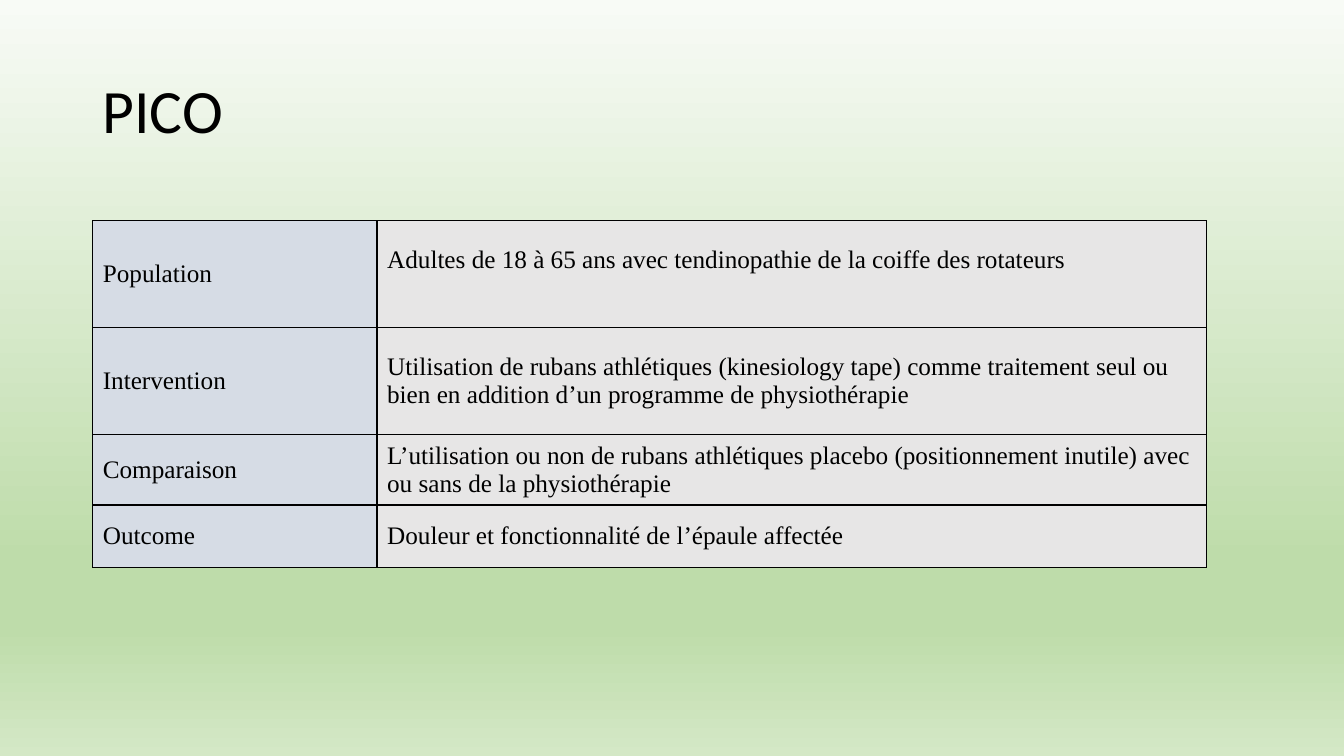
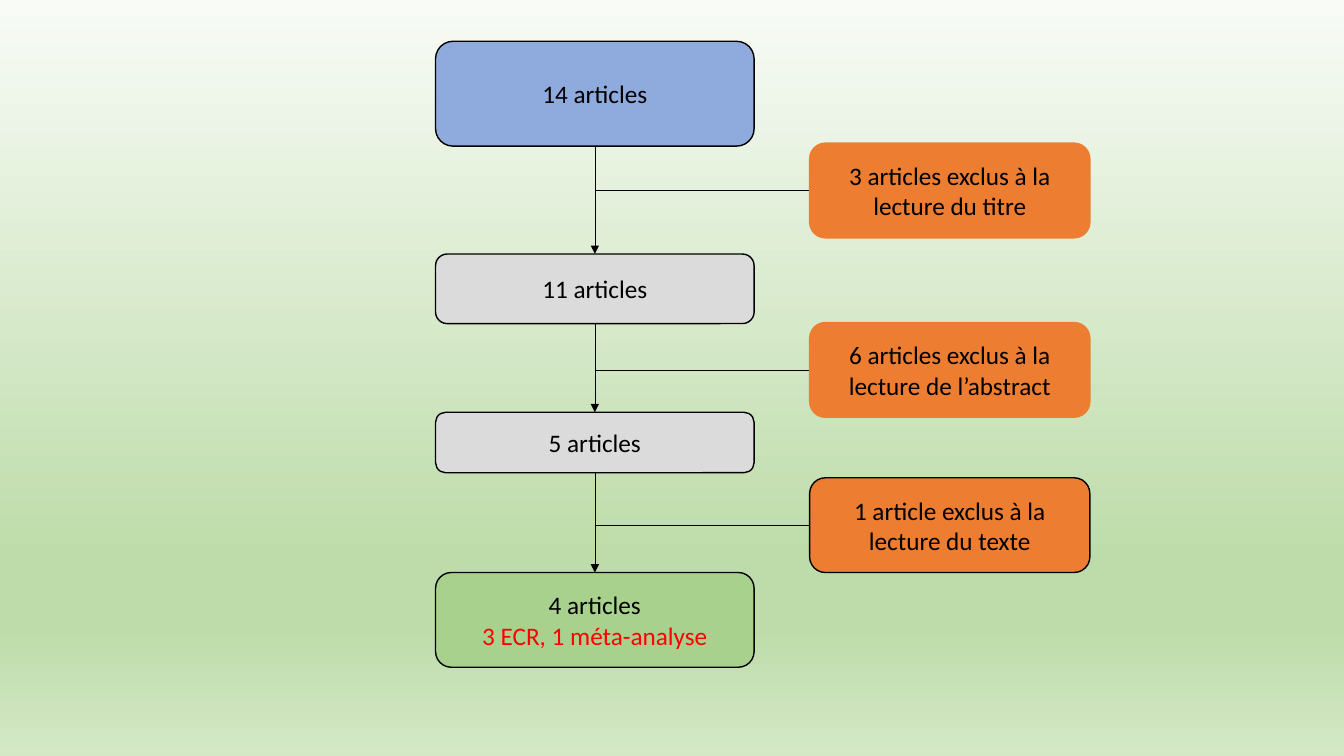
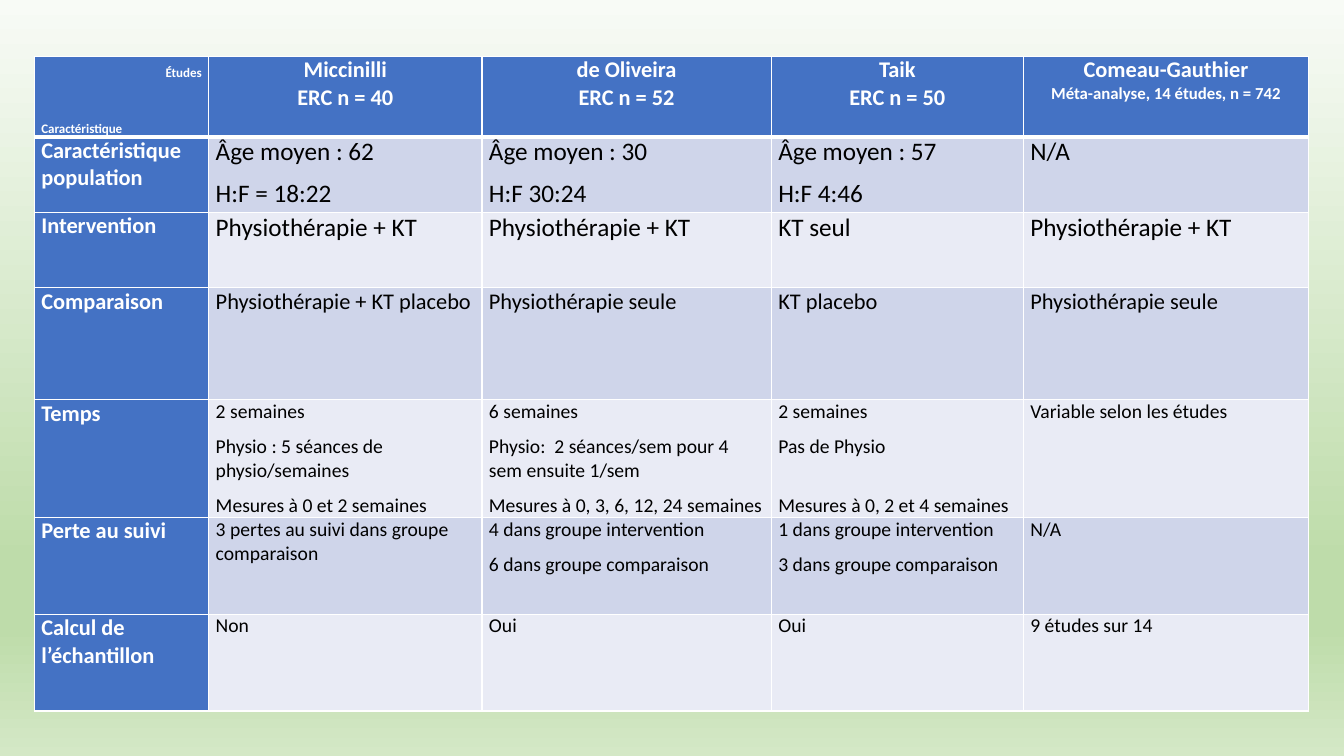
from lxml import etree
from pptx import Presentation
from pptx.dml.color import RGBColor
from pptx.enum import shapes, text
from pptx.oxml.ns import qn
from pptx.util import Inches, Pt

# Shared style
COLORS = {
    "black": "000000", "white": "FFFFFF", "red": "FF0000",
    "label": "D6DCE5", "value": "E7E6E6",
    "blue": "8FAADC", "grey": "DBDBDB", "green": "A9D18E", "orange": "ED7D31",
    "header": "4472C4", "band_dark": "CFD5EA", "band_light": "E9EBF5",
}
BACKGROUND = [(0, "F8FBF6"), (74, "BEDCAA"), (83, "BEDCAA"), (100, "D4E8C6")]
SANS, SERIF = "Calibri", "Times New Roman"
LEFT, CENTER, RIGHT = text.PP_ALIGN.LEFT, text.PP_ALIGN.CENTER, text.PP_ALIGN.RIGHT
MIDDLE, TOP = text.MSO_ANCHOR.MIDDLE, text.MSO_ANCHOR.TOP

# Slide 1: label, description, row height
PICO = [
    ("Population", "Adultes de 18 à 65 ans avec tendinopathie de la coiffe des rotateurs", 1.06),
    ("Intervention", "Utilisation de rubans athlétiques (kinesiology tape) comme traitement seul ou "
     "bien en addition d’un programme de physiothérapie", 1.06),
    ("Comparaison", "L’utilisation ou non de rubans athlétiques placebo (positionnement inutile) "
     "avec ou sans de la physiothérapie", 0.62),
    ("Outcome", "Douleur et fonctionnalité de l’épaule affectée", 0.62),
]

# Slide 2: lines with colours, top, height, fill
STAGES = [
    ([("14 articles", "black")], 0.41, 1.04, "blue"),
    ([("11 articles", "black")], 2.52, 0.69, "grey"),
    ([("5 articles", "black")], 4.09, 0.6, "grey"),
    ([("4 articles", "black"), ("3 ECR, 1 méta-analyse", "red")], 5.68, 0.94, "green"),
]
# Text, top, outline
EXCLUSIONS = [
    ("3 articles exclus à la lecture du titre", 1.42, "orange"),
    ("6 articles exclus à la lecture de l’abstract", 3.2, "orange"),
    ("1 article exclus à la lecture du texte", 4.74, "black"),
]
STAGE_X, STAGE_W = 4.32, 3.16
EXCLUSION_X, EXCLUSION_W, EXCLUSION_H = 8.03, 2.78, 0.94

# Slide 3: studies as (name, detail, detail size)
STUDIES = [
    ("Miccinilli", "ERC n = 40", 16),
    ("de Oliveira", "ERC n = 52", 16),
    ("Taik", "ERC n = 50", 16),
    ("Comeau-Gauthier", "Méta-analyse, 14 études, n = 742", 12),
]
STUDY_COLS = [1.73, 2.71, 2.87, 2.5, 2.83]
HEADER_H = 0.74
# Label, row height, text size, paragraphs for each study
FEATURES = [
    ("Caractéristique population", 0.75, 18, [
        ["Âge moyen : 62", "H:F = 18:22"], ["Âge moyen : 30", "H:F 30:24"],
        ["Âge moyen : 57", "H:F 4:46"], ["N/A"]]),
    ("Intervention", 0.75, 18, [
        ["Physiothérapie + KT"], ["Physiothérapie + KT"], ["KT seul"], ["Physiothérapie + KT"]]),
    ("Comparaison", 1.11, 16, [
        ["Physiothérapie + KT placebo"], ["Physiothérapie seule"], ["KT placebo"],
        ["Physiothérapie seule"]]),
    ("Temps", 0.96, 14, [
        ["2 semaines", "Physio : 5 séances de physio/semaines", "Mesures à 0 et 2 semaines"],
        ["6 semaines", "Physio:  2 séances/sem pour 4 sem ensuite 1/sem",
         "Mesures à 0, 3, 6, 12, 24 semaines"],
        ["2 semaines", "Pas de Physio", "Mesures à 0, 2 et 4 semaines"],
        ["Variable selon les études"]]),
    ("Perte au suivi", 0.96, 14, [
        ["3 pertes au suivi dans groupe comparaison"],
        ["4 dans groupe intervention", "6 dans groupe comparaison"],
        ["1 dans groupe intervention", "3 dans groupe comparaison"], ["N/A"]]),
    ("Calcul de l’échantillon", 0.96, 14, [["Non"], ["Oui"], ["Oui"], ["9 études sur 14"]]),
]


def rgb(name):
    return RGBColor.from_string(COLORS[name])


def add_run(p, words, size, color="black", font=SANS, bold=False):
    r = p.add_run()
    r.text = words
    r.font.size, r.font.name, r.font.bold = Pt(size), font, bold
    r.font.color.rgb = rgb(color)
    return r


def next_paragraph(tf, index, align=LEFT, after=0):
    p = tf.add_paragraph() if index else tf.paragraphs[0]
    p.alignment, p.space_after = align, Pt(after)
    return p


def set_background(master):
    master.background.fill.gradient()
    grad = next(master.element.iter(qn("a:gradFill")))
    stops = grad.find(qn("a:gsLst"))
    for old in list(stops):
        stops.remove(old)
    for pos, color in BACKGROUND:
        stop = etree.SubElement(stops, qn("a:gs"), pos=str(pos * 1000))
        etree.SubElement(stop, qn("a:srgbClr"), val=color)
    lin = grad.find(qn("a:lin"))
    lin.set("ang", "5400000")
    lin.set("scaled", "0")


def add_table(slide, x, y, cols, rows):
    frame = slide.shapes.add_table(len(rows), len(cols), Inches(x), Inches(y),
                                   Inches(sum(cols)), Inches(sum(rows)))
    table = frame.table
    table.first_row = table.horz_banding = False
    for col, w in zip(table.columns, cols):
        col.width = Inches(w)
    for row, h in zip(table.rows, rows):
        row.height = Inches(h)
    return table


def style_cell(cell, fill, border, anchor, top=1, bottom=1):
    tcPr = cell._tc.get_or_add_tcPr()
    for side, width in (("L", 1), ("R", 1), ("T", top), ("B", bottom)):
        ln = etree.SubElement(tcPr, qn("a:ln" + side), w=str(Pt(width)))
        solid = etree.SubElement(ln, qn("a:solidFill"))
        etree.SubElement(solid, qn("a:srgbClr"), val=COLORS[border])
    cell.fill.solid()
    cell.fill.fore_color.rgb = rgb(fill)
    cell.vertical_anchor = anchor


def add_box(slide, x, y, w, h, fill, outline, lines):
    sp = slide.shapes.add_shape(shapes.MSO_SHAPE.ROUNDED_RECTANGLE,
                                Inches(x), Inches(y), Inches(w), Inches(h))
    sp.shadow.inherit = False
    sp.fill.solid()
    sp.fill.fore_color.rgb = rgb(fill)
    sp.line.color.rgb, sp.line.width = rgb(outline), Pt(1)
    tf = sp.text_frame
    tf.word_wrap, tf.vertical_anchor = True, MIDDLE
    for i, (words, color) in enumerate(lines):
        add_run(next_paragraph(tf, i, CENTER), words, 18, color)


def add_line(slide, x1, y1, x2, y2, arrow=False):
    line = slide.shapes.add_connector(shapes.MSO_CONNECTOR.STRAIGHT,
                                      Inches(x1), Inches(y1), Inches(x2), Inches(y2))
    line.line.color.rgb, line.line.width = rgb("black"), Pt(0.5)
    if arrow:
        etree.SubElement(line.line._get_or_add_ln(), qn("a:tailEnd"), type="triangle")
    etree.SubElement(line._element.spPr, qn("a:effectLst"))


def build_pico(slide):
    # Title
    title = slide.shapes.add_textbox(Inches(0.92), Inches(0.4), Inches(11.5), Inches(1.45))
    tf = title.text_frame
    tf.word_wrap, tf.vertical_anchor = True, MIDDLE
    p = next_paragraph(tf, 0)
    p.line_spacing = 0.9
    add_run(p, "PICO", 44)

    # Table
    table = add_table(slide, 0.92, 2.19, [2.82, 8.23], [h for _, _, h in PICO])
    for i, (label, value, _) in enumerate(PICO):
        for j, (words, fill) in enumerate([(label, "label"), (value, "value")]):
            cell = table.cell(i, j)
            style_cell(cell, fill, "black", MIDDLE)
            add_run(next_paragraph(cell.text_frame, 0), words, 18, font=SERIF)
    table.cell(0, 1).margin_bottom = Inches(0.33)


def build_selection(slide):
    # Stages and the arrows between them
    axis = STAGE_X + STAGE_W / 2
    for lines, y, h, fill in STAGES:
        add_box(slide, STAGE_X, y, STAGE_W, h, fill, "black", lines)
    for (_, y, h, _), (_, next_y, _, _) in zip(STAGES, STAGES[1:]):
        add_line(slide, axis, y + h, axis, next_y, arrow=True)

    # Exclusions
    for words, y, outline in EXCLUSIONS:
        mid = y + EXCLUSION_H / 2
        add_line(slide, axis, mid, EXCLUSION_X, mid)
        add_box(slide, EXCLUSION_X, y, EXCLUSION_W, EXCLUSION_H, "orange", outline,
                [(words, "black")])


def build_studies(slide):
    rows = [HEADER_H] + [h for _, h, _, _ in FEATURES]
    table = add_table(slide, 0.34, 0.56, STUDY_COLS, rows)
    for i in range(len(rows)):
        for j in range(len(STUDY_COLS)):
            cell = table.cell(i, j)
            cell.margin_left = cell.margin_right = Inches(0.07)
            cell.margin_top = cell.margin_bottom = 0
            band = "band_dark" if i % 2 else "band_light"
            style_cell(cell, "header" if i == 0 or j == 0 else band, "white", TOP,
                       top=3 if i == 1 else 1, bottom=3 if i == 0 else 1)

    # Corner cell with raised and lowered labels
    corner = table.cell(0, 0).text_frame
    for i, (words, align, shift) in enumerate([("Études", RIGHT, 2), ("Caractéristique", LEFT, -75)]):
        r = add_run(next_paragraph(corner, i, align, 8), words, 16, "white", bold=True)
        r._r.get_or_add_rPr().set("baseline", str(shift * 1000))

    # Study headers
    for j, (name, detail, size) in enumerate(STUDIES, 1):
        p = next_paragraph(table.cell(0, j).text_frame, 0, CENTER, 8)
        add_run(p, name, 16, "white", bold=True)
        p.add_line_break()
        add_run(p, detail, size, "white", bold=True)

    # Features
    for i, (label, _, size, values) in enumerate(FEATURES, 1):
        p = next_paragraph(table.cell(i, 0).text_frame, 0, after=8)
        add_run(p, label, 16, "white", bold=True)
        for j, paragraphs in enumerate(values, 1):
            tf = table.cell(i, j).text_frame
            for k, words in enumerate(paragraphs):
                add_run(next_paragraph(tf, k, after=8), words, size)
    # Level the last measure with its neighbours
    table.cell(4, 3).text_frame.paragraphs[2].space_before = Pt(17)


def main():
    prs = Presentation()
    prs.slide_width, prs.slide_height = Inches(13.33), Inches(7.5)
    set_background(prs.slide_master)
    for build in (build_pico, build_selection, build_studies):
        build(prs.slides.add_slide(prs.slide_layouts[6]))
    prs.save("out.pptx")


if __name__ == "__main__":
    main()
